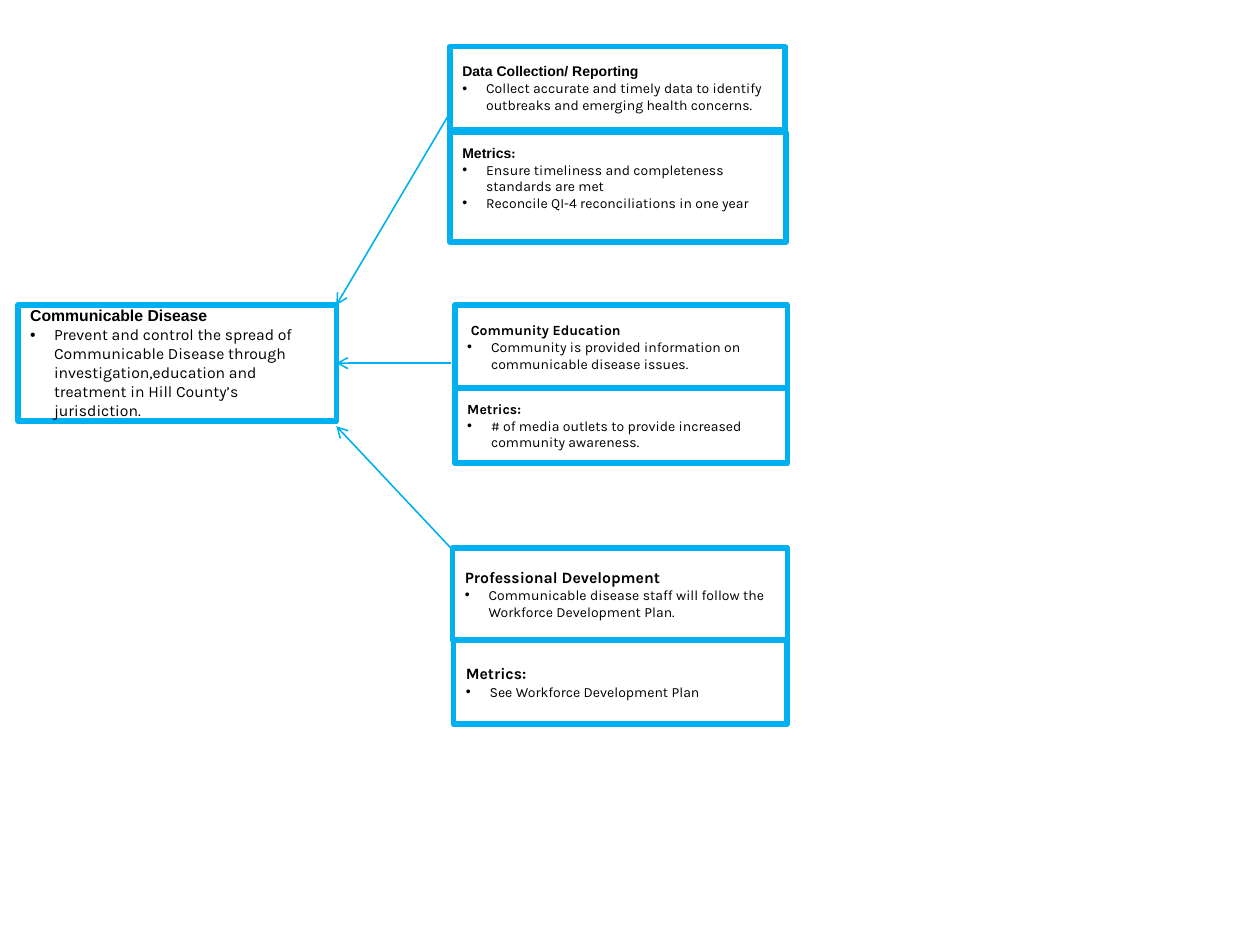
"""Build a strategy map linking a communicable disease goal to its three objectives."""
from dataclasses import dataclass

from lxml.etree import SubElement
from pptx import Presentation
from pptx.dml.color import RGBColor
from pptx.enum.shapes import MSO_CONNECTOR as Connector, MSO_SHAPE as Shape
from pptx.enum.text import MSO_ANCHOR as Anchor, PP_ALIGN as Align
from pptx.oxml.ns import qn
from pptx.util import Cm, Pt


@dataclass(frozen=True)
class Theme:
    accent: RGBColor = RGBColor(0x00, 0xB0, 0xF0)
    paper: RGBColor = RGBColor(0xFF, 0xFF, 0xFF)
    ink: RGBColor = RGBColor(0x00, 0x00, 0x00)
    heading_font: str = "Arial"
    body_font: str = "Karla"
    large: float = 9
    small: float = 8
    border: float = 3.15
    arrow: float = 0.9


THEME = Theme()
ARIAL, KARLA = THEME.heading_font, THEME.body_font
LARGE, SMALL = THEME.large, THEME.small
HANGING = Cm(0.48)

GOAL_RIGHT, OBJECTIVE_LEFT = 6.78, 9.09
ARROW_HEIGHTS = [(2.24, 6.15), (7.32, 7.32), (11.05, 8.59)]

CARDS = [
    ((0.36, 6.15, 6.43, 2.34), [("Communicable Disease", ARIAL)], LARGE,
     ["Prevent and control the spread of Communicable Disease through "
      "investigation,education and treatment in Hill County’s jurisdiction."], LARGE, 0.13),
    ((9.07, 0.94, 6.76, 1.68), [("Data Collection/ Reporting", ARIAL)], SMALL,
     ["Collect accurate and timely data to identify outbreaks and emerging "
      "health concerns."], SMALL, 0.13),
    ((9.07, 2.67, 6.78, 2.21), [("Metrics", ARIAL), (":", KARLA)], SMALL,
     ["Ensure timeliness and completeness standards are met",
      "Reconcile QI-4 reconciliations in one year"], SMALL, 0.5),
    ((9.17, 6.15, 6.71, 1.7), [(" Community Education", KARLA)], SMALL,
     ["Community is provided information on communicable disease issues."], SMALL, 0.13),
    ((9.17, 7.82, 6.71, 1.52), [("Metrics:", KARLA)], SMALL,
     ["# of media outlets to provide increased community awareness."], SMALL, 0.13),
    ((9.12, 11.05, 6.76, 1.85), [("Professional Development", KARLA)], LARGE,
     ["Communicable disease staff will follow the Workforce Development Plan."], SMALL, 0.13),
    ((9.14, 12.9, 6.73, 1.7), [("Metrics:", KARLA)], LARGE,
     ["See Workforce Development Plan"], SMALL, 0.13),
]


def add_run(paragraph, words, font, size, bold=False):
    run = paragraph.add_run()
    run.text = words
    run.font.name = font
    run.font.size = Pt(size)
    run.font.bold = bold
    run.font.color.rgb = THEME.ink


def add_bullet(frame, words, size):
    item = frame.add_paragraph()
    item.alignment = Align.LEFT
    properties = item._p.get_or_add_pPr()
    properties.set("marL", str(HANGING))
    properties.set("indent", str(-HANGING))
    SubElement(properties, qn("a:buFont"), typeface=ARIAL)
    SubElement(properties, qn("a:buChar"), char="•")
    add_run(item, words, KARLA, size)


def add_card(slide, place, heading, heading_size, items, item_size, bottom_inset):
    card = slide.shapes.add_shape(Shape.RECTANGLE, *map(Cm, place))
    card.shadow.inherit = False
    card.fill.solid()
    card.fill.fore_color.rgb = THEME.paper
    card.line.color.rgb = THEME.accent
    card.line.width = Pt(THEME.border)
    frame = card.text_frame
    frame.word_wrap = True
    frame.vertical_anchor = Anchor.MIDDLE
    frame.margin_bottom = Cm(bottom_inset)
    title = frame.paragraphs[0]
    title.alignment = Align.LEFT
    for words, font in heading:
        add_run(title, words, font, heading_size, bold=True)
    for words in items:
        add_bullet(frame, words, item_size)


def add_arrow(slide, start_height, end_height):
    arrow = slide.shapes.add_connector(
        Connector.STRAIGHT, Cm(OBJECTIVE_LEFT), Cm(start_height),
        Cm(GOAL_RIGHT), Cm(end_height))
    arrow.line.color.rgb = THEME.accent
    arrow.line.width = Pt(THEME.arrow)
    SubElement(arrow.line._get_or_add_ln(), qn("a:tailEnd"), type="arrow")
    SubElement(arrow._element.spPr, qn("a:effectLst"))


def main():
    deck = Presentation()
    deck.slide_width, deck.slide_height = Cm(25.4), Cm(19.05)
    slide = deck.slides.add_slide(deck.slide_layouts[6])
    for card in CARDS:
        add_card(slide, *card)
    for heights in ARROW_HEIGHTS:
        add_arrow(slide, *heights)
    deck.save("out.pptx")


if __name__ == "__main__":
    main()
